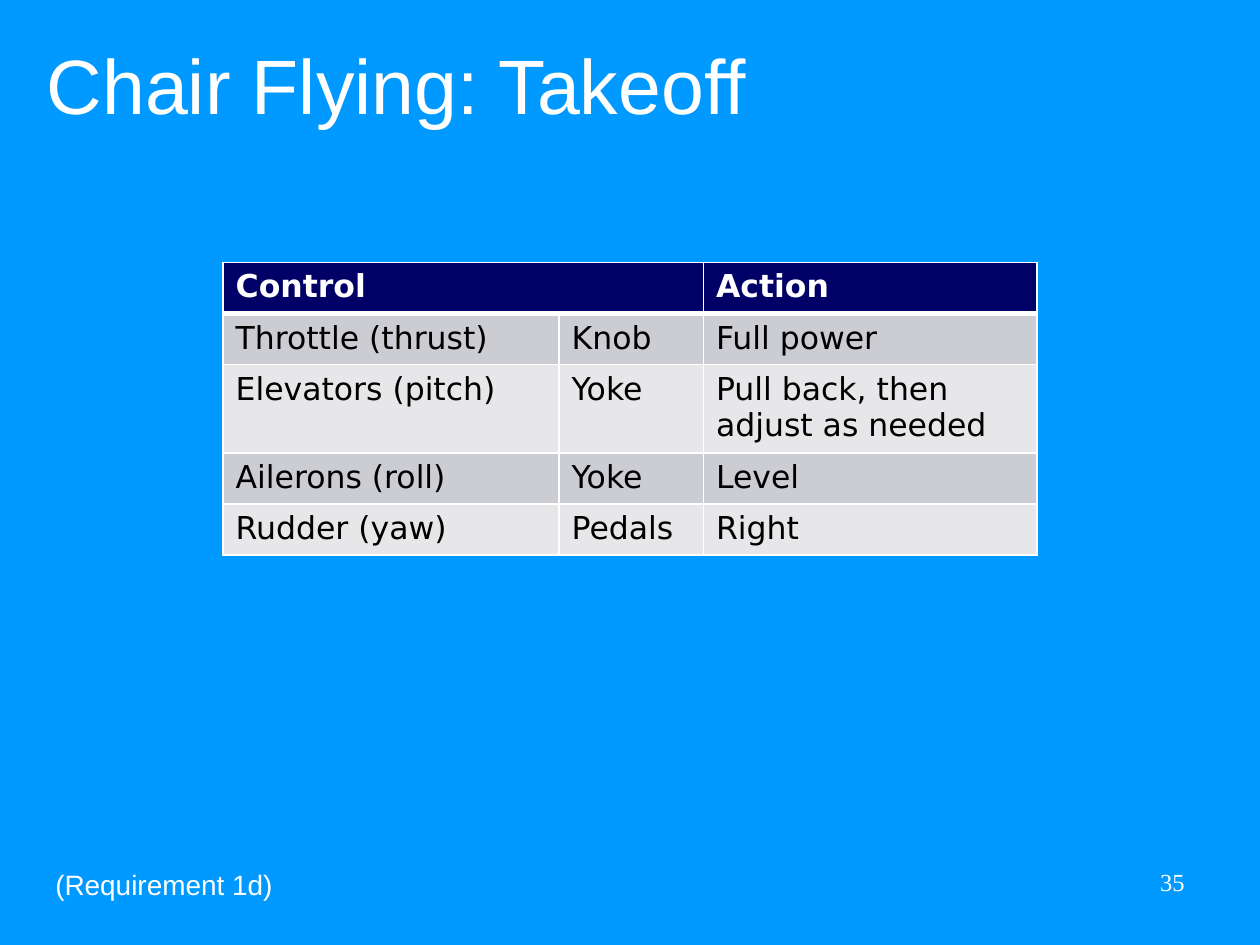
from lxml import etree
from pptx import Presentation
from pptx.dml.color import RGBColor
from pptx.enum import text
from pptx.oxml import ns
from pptx.util import Pt

WHITE, BLACK, SKY, NAVY = "FFFFFF", "000000", "0099FF", "000066"
BANDS = ["CCCCD3", "E7E7EA"]


def write(para, words, color, **font):
    para.text = words
    para.font.color.rgb = RGBColor.from_string(color)
    for name, value in font.items():
        setattr(para.font, name, value)


def add_border(cell, side, width):
    """Draw a white line on one side (L, R, T or B) of a table cell."""
    line = etree.SubElement(cell._tc.get_or_add_tcPr(), ns.qn(f"a:ln{side}"), w=str(Pt(width)))
    fill = etree.SubElement(line, ns.qn("a:solidFill"))
    etree.SubElement(fill, ns.qn("a:srgbClr"), val=WHITE)


deck = Presentation()
deck.slide_width, deck.slide_height = Pt(720), Pt(540)
page = deck.slides.add_slide(deck.slide_layouts[5])
page.background.fill.solid()
page.background.fill.fore_color.rgb = RGBColor.from_string(SKY)

# Title
title = page.shapes.title
place = {"left": Pt(19.5), "top": Pt(9.5), "width": Pt(680), "height": Pt(68.5)}
for name, value in place.items():
    setattr(title, name, value)
title.text_frame.vertical_anchor = text.MSO_ANCHOR.BOTTOM
title.text_frame.auto_size = text.MSO_AUTO_SIZE.NONE
heading = title.text_frame.paragraphs[0]
heading.alignment = text.PP_ALIGN.LEFT
write(heading, "Chair Flying: Takeoff", WHITE, name="Arial", size=Pt(44))

# Footer: page number and requirement
number = page.shapes.add_textbox(Pt(516), Pt(492), Pt(168), Pt(37.5)).text_frame
number.word_wrap = True
number.paragraphs[0].alignment = text.PP_ALIGN.RIGHT
write(number.paragraphs[0], "35", WHITE, name="Times New Roman", size=Pt(14))

requirement = page.shapes.add_textbox(Pt(24.5), Pt(492), Pt(140.5), Pt(26.5)).text_frame
requirement.word_wrap = False
requirement.auto_size = text.MSO_AUTO_SIZE.SHAPE_TO_FIT_TEXT
requirement.vertical_anchor = text.MSO_ANCHOR.MIDDLE
write(requirement.paragraphs[0], "(Requirement 1d)", WHITE, name="Arial", size=Pt(16))

# Table of controls
rows = [
    ["Control", "", "Action"],
    ["Throttle (thrust)", "Knob", "Full power"],
    ["Elevators (pitch)", "Yoke", "Pull back, then\nadjust as needed"],
    ["Ailerons (roll)", "Yoke", "Level"],
    ["Rudder (yaw)", "Pedals", "Right"],
]
widths = [192, 82.5, 190.5]
heights = [29.2, 29.2, 50.4, 29.2, 29.2]
table = page.shapes.add_table(
    len(rows), len(widths), Pt(127.5), Pt(150), Pt(sum(widths)), Pt(sum(heights))
).table
for column, width in zip(table.columns, widths):
    column.width = Pt(width)
for r, (row, height) in enumerate(zip(rows, heights)):
    table.rows[r].height = Pt(height)
    header = r == 0
    for c, words in enumerate(row):
        cell = table.cell(r, c)
        for side in "LRTB":
            under_header = (r, side) in [(0, "B"), (1, "T")]
            add_border(cell, side, 3 if under_header else 1)
        cell.fill.solid()
        cell.fill.fore_color.rgb = RGBColor.from_string(NAVY if header else BANDS[(r - 1) % 2])
        write(cell.text_frame.paragraphs[0], words, WHITE if header else BLACK,
              name="DejaVu Sans", size=Pt(18), bold=header)
table.cell(0, 0).merge(table.cell(0, 1))

deck.save("out.pptx")
